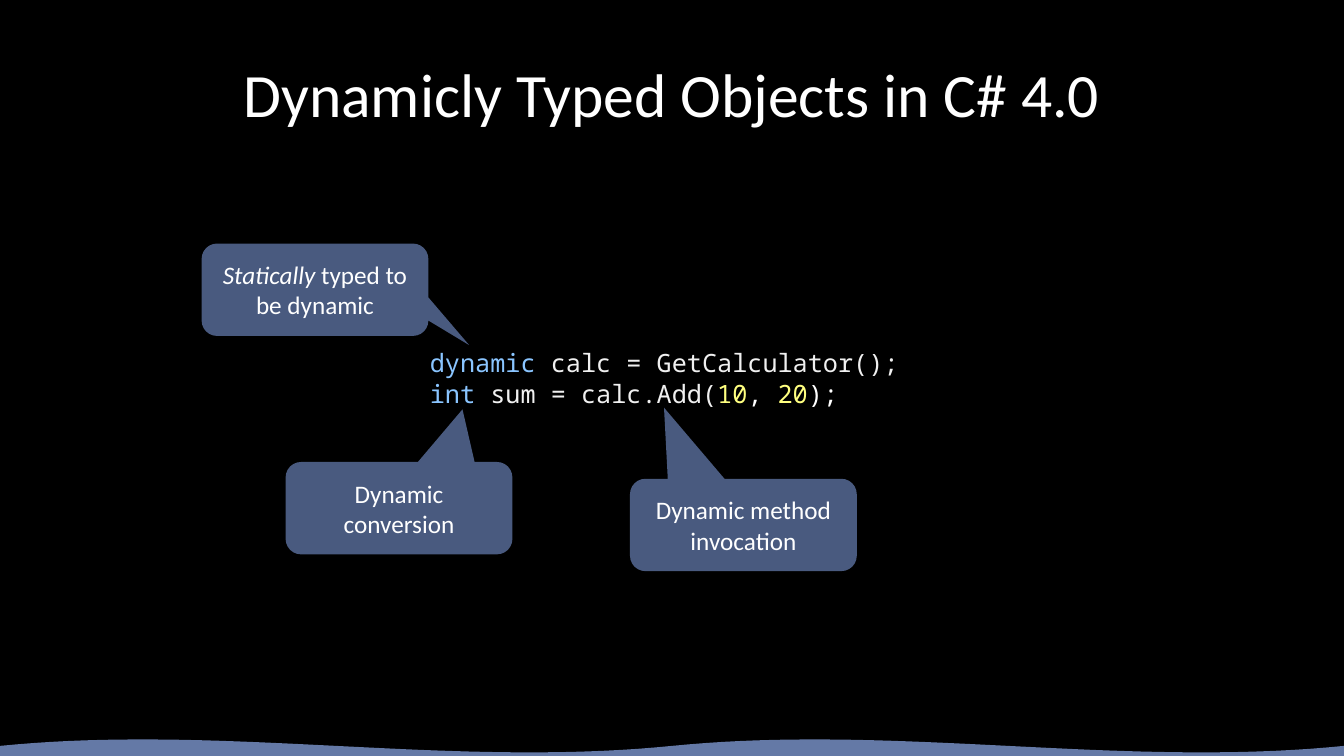
"""Build the slide on dynamically typed objects in C# 4.0."""
from dataclasses import dataclass

from pptx import Presentation
from pptx.dml.color import RGBColor
from pptx.enum.shapes import MSO_SHAPE
from pptx.enum.text import MSO_ANCHOR, PP_ALIGN
from pptx.slide import Slide
from pptx.text.text import _Paragraph
from pptx.util import Pt

BLACK = RGBColor(0x00, 0x00, 0x00)
WHITE = RGBColor(0xFF, 0xFF, 0xFF)
WAVE_BLUE = RGBColor(0x64, 0x79, 0xA6)
CALLOUT_BLUE = RGBColor(0x49, 0x5A, 0x7F)
KEYWORD = RGBColor(0x8A, 0xC5, 0xFF)
PLAIN = RGBColor(0xF0, 0xF0, 0xF0)
NUMBER = RGBColor(0xFF, 0xFF, 0x80)

BODY_FONT, CODE_FONT = "Calibri", "Noto Sans Mono"
SLIDE_WIDTH, SLIDE_HEIGHT = 960, 540
CALLOUT_WIDTH, CALLOUT_HEIGHT = 162, 66
WAVE_LEVEL, WAVE_SWING, WAVE_STEPS = 532.8, 16, 40


@dataclass(frozen=True)
class Token:
    text: str
    color: RGBColor = WHITE
    italic: bool = False


@dataclass(frozen=True)
class Callout:
    left: float
    top: float
    tip_x: float
    tip_y: float
    tokens: tuple[Token, ...]


CODE = (
    (Token("dynamic ", KEYWORD), Token("calc = GetCalculator();", PLAIN)),
    (Token("int ", KEYWORD), Token("sum = calc.Add(", PLAIN), Token("10", NUMBER),
     Token(","), Token(" 20", NUMBER), Token(");")),
)

CALLOUTS = (
    Callout(144, 174, 0.68, 0.6,
            (Token("Statically", italic=True), Token(" typed to be dynamic"))),
    Callout(450, 342, -0.35, -1.27, (Token("Dynamic method invocation"),)),
    Callout(204, 330, 0.28, -1.07, (Token("Dynamic conversion"),)),
)


def write_tokens(paragraph: _Paragraph, tokens: tuple[Token, ...], font: str) -> None:
    """Fill a paragraph with coloured runs in one font."""
    paragraph.font.name = font
    paragraph.font.size = Pt(18)
    for token in tokens:
        run = paragraph.add_run()
        run.text = token.text
        run.font.color.rgb = token.color
        if token.italic:
            run.font.italic = True


def add_wave(slide: Slide) -> None:
    """Draw the two-period wave along the bottom edge."""
    points = []
    for step in range(1, 2 * WAVE_STEPS + 1):
        t = step / WAVE_STEPS % 1
        rise = 3 * t * (1 - t) * (1 - 2 * t) * WAVE_SWING
        x = SLIDE_WIDTH * step / (2 * WAVE_STEPS)
        points.append((Pt(x), Pt(WAVE_LEVEL - rise)))
    points += [(Pt(SLIDE_WIDTH), Pt(SLIDE_HEIGHT)), (Pt(0), Pt(SLIDE_HEIGHT))]
    builder = slide.shapes.build_freeform(Pt(0), Pt(WAVE_LEVEL))
    builder.add_line_segments(points, close=True)
    wave = builder.convert_to_shape()
    wave.shadow.inherit = False
    wave.fill.solid()
    wave.fill.fore_color.rgb = WAVE_BLUE
    wave.line.fill.background()


def set_title(slide: Slide) -> None:
    """Place and format the title."""
    title = slide.shapes.title
    title.left, title.top, title.width, title.height = Pt(120), Pt(21.6), Pt(720), Pt(90)
    title.text_frame.text = "Dynamicly Typed Objects in C# 4.0"
    title.text_frame.vertical_anchor = MSO_ANCHOR.MIDDLE
    heading = title.text_frame.paragraphs[0]
    heading.alignment = PP_ALIGN.CENTER
    heading.font.name = BODY_FONT
    heading.font.size = Pt(44)
    heading.font.color.rgb = WHITE


def add_code(slide: Slide) -> None:
    """Add the highlighted code sample."""
    frame = slide.shapes.add_textbox(Pt(300), Pt(244.8), Pt(360), Pt(51)).text_frame
    frame.word_wrap = True
    for index, tokens in enumerate(CODE):
        paragraph = frame.add_paragraph() if index else frame.paragraphs[0]
        write_tokens(paragraph, tokens, CODE_FONT)


def add_callout(slide: Slide, callout: Callout) -> None:
    """Add one rounded callout pointing at the code."""
    bubble = slide.shapes.add_shape(
        MSO_SHAPE.ROUNDED_RECTANGULAR_CALLOUT,
        Pt(callout.left), Pt(callout.top), Pt(CALLOUT_WIDTH), Pt(CALLOUT_HEIGHT))
    bubble.adjustments[0] = callout.tip_x
    bubble.adjustments[1] = callout.tip_y
    bubble.shadow.inherit = False
    bubble.fill.solid()
    bubble.fill.fore_color.rgb = CALLOUT_BLUE
    bubble.line.fill.background()
    frame = bubble.text_frame
    frame.word_wrap = True
    frame.vertical_anchor = MSO_ANCHOR.MIDDLE
    frame.paragraphs[0].alignment = PP_ALIGN.CENTER
    write_tokens(frame.paragraphs[0], callout.tokens, BODY_FONT)


def main() -> None:
    """Build and save the presentation."""
    presentation = Presentation()
    presentation.slide_width = Pt(SLIDE_WIDTH)
    presentation.slide_height = Pt(SLIDE_HEIGHT)
    slide = presentation.slides.add_slide(presentation.slide_layouts.get_by_name("Title Only"))
    slide.background.fill.solid()
    slide.background.fill.fore_color.rgb = BLACK
    add_wave(slide)
    set_title(slide)
    add_code(slide)
    for callout in CALLOUTS:
        add_callout(slide, callout)
    presentation.save("out.pptx")


if __name__ == "__main__":
    main()
